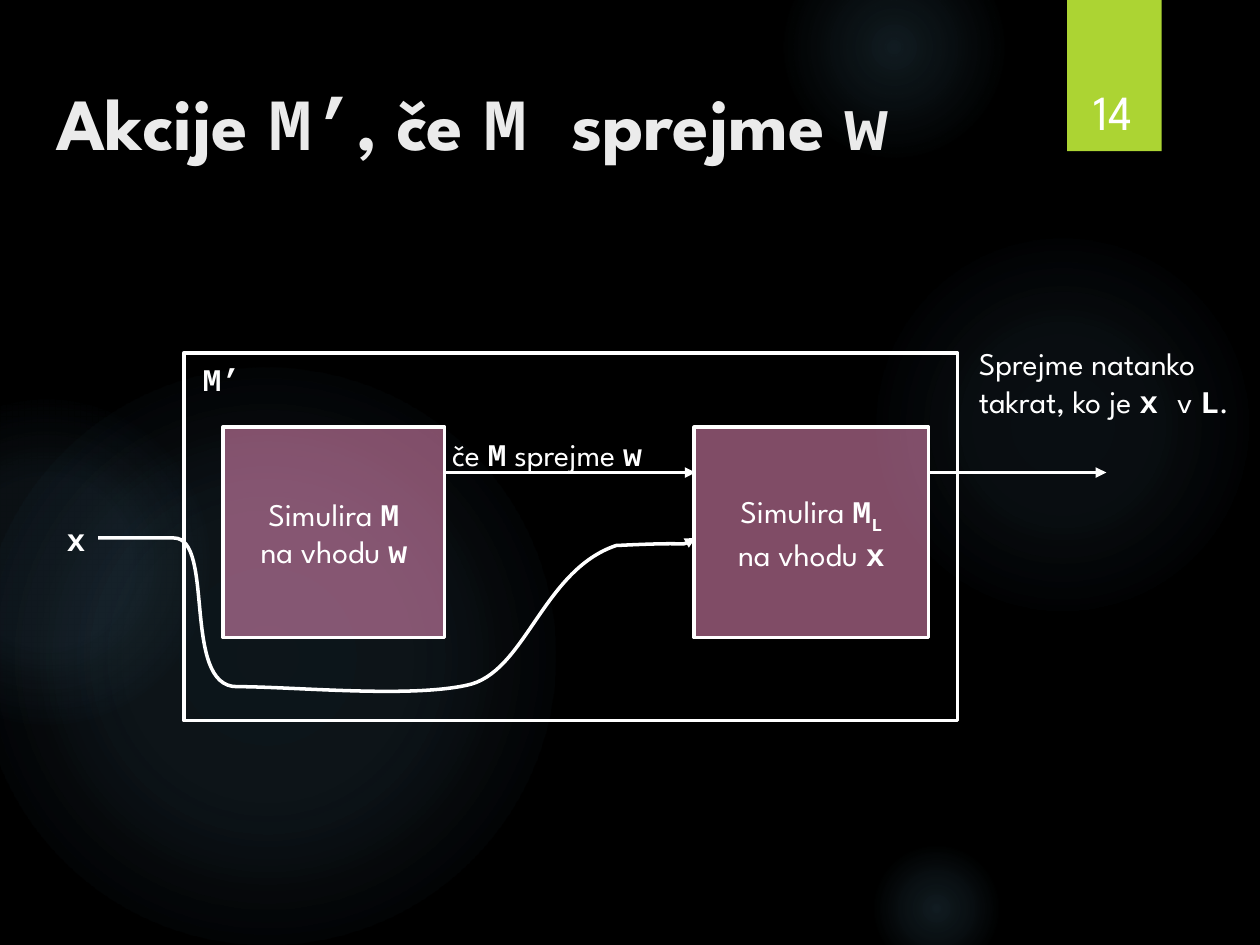
import pptx
import pptx.dml.color
import pptx.enum.shapes
import pptx.enum.text
import pptx.oxml
import pptx.oxml.ns
import pptx.util
from pptx.util import Inches

RGBColor = pptx.dml.color.RGBColor
BLACK = RGBColor(0x00, 0x00, 0x00)
WHITE = RGBColor(0xFF, 0xFF, 0xFF)
TITLE_GRAY = RGBColor(0xEB, 0xEB, 0xEB)
LIME = RGBColor(0xAC, 0xD4, 0x33)
PINK = RGBColor(0xFF, 0x99, 0xCC)
GLOW_BLUE = RGBColor(0x7A, 0xC4, 0xF0)

SHAPES = pptx.enum.shapes.MSO_SHAPE
ANCHOR = pptx.enum.text.MSO_ANCHOR
ALIGN = pptx.enum.text.PP_ALIGN
NAMESPACE = pptx.oxml.ns.nsdecls("a")
qn = pptx.oxml.ns.qn


def write_text(shape, text, size=18, color=WHITE, bold=False, align=ALIGN.LEFT,
               anchor=ANCHOR.TOP, wrap=True):
    """Write lines of text, with `code` in bold monospace and _ before a subscript."""
    frame = shape.text_frame
    frame.word_wrap = wrap
    frame.vertical_anchor = anchor
    for index, line in enumerate(text.split("\n")):
        paragraph = frame.paragraphs[0] if index == 0 else frame.add_paragraph()
        paragraph.alignment = align
        for position, piece in enumerate(line.split("`")):
            is_code = position % 2 == 1
            for level, part in enumerate(piece.split("_")):
                if not part:
                    continue
                run = paragraph.add_run()
                run.text = part
                run.font.name = "Courier New" if is_code else "League Spartan"
                run.font.size = pptx.util.Pt(size)
                run.font.bold = bold or is_code
                run.font.color.rgb = color
                if level:
                    run.font._element.set("baseline", "-25000")


class Diagram:
    def __init__(self, slide, line_color=WHITE, line_width=2):
        self.slide = slide
        self.line_color = line_color
        self.line_width = pptx.util.Pt(line_width)

    def style_line(self, shape, arrow=False):
        shape.line.color.rgb = self.line_color
        shape.line.width = self.line_width
        if arrow:
            shape.line._get_or_add_ln().append(
                pptx.oxml.parse_xml(f'<a:tailEnd {NAMESPACE} type="triangle"/>'))

    def box(self, left, top, width, height, kind=SHAPES.RECTANGLE, fill=None,
            alpha=None, outlined=True):
        shape = self.slide.shapes.add_shape(
            kind, Inches(left), Inches(top), Inches(width), Inches(height))
        shape.shadow.inherit = False
        if fill is None:
            shape.fill.background()
        else:
            shape.fill.solid()
            shape.fill.fore_color.rgb = fill
        if alpha is not None:
            color = shape._element.spPr.find(".//" + qn("a:srgbClr"))
            color.append(pptx.oxml.parse_xml(
                f'<a:alpha {NAMESPACE} val="{alpha * 1000}"/>'))
        if outlined:
            self.style_line(shape)
        else:
            shape.line.fill.background()
        return shape

    def glow(self, left, top, diameter, stops):
        shape = self.box(left, top, diameter, diameter, kind=SHAPES.OVAL, outlined=False)
        stop_xml = "".join(
            f'<a:gs pos="{position * 1000}"><a:srgbClr val="{GLOW_BLUE}">'
            f'<a:alpha val="{alpha * 1000}"/></a:srgbClr></a:gs>'
            for position, alpha in stops)
        gradient = pptx.oxml.parse_xml(
            f'<a:gradFill {NAMESPACE} rotWithShape="1"><a:gsLst>{stop_xml}</a:gsLst>'
            '<a:path path="circle"><a:fillToRect l="50000" t="50000" r="50000" b="50000"/>'
            '</a:path></a:gradFill>')
        properties = shape._element.spPr
        properties.replace(properties.find(qn("a:noFill")), gradient)

    def label(self, left, top, width, height, text, **text_format):
        shape = self.slide.shapes.add_textbox(
            Inches(left), Inches(top), Inches(width), Inches(height))
        write_text(shape, text, **text_format)

    def simulator(self, left, width, text):
        shape = self.box(left, 3.39, width, 1.67, fill=PINK, alpha=50)
        write_text(shape, text, align=ALIGN.CENTER, anchor=ANCHOR.MIDDLE, wrap=False)

    def arrow(self, start, end, y):
        connector = self.slide.shapes.add_connector(
            pptx.enum.shapes.MSO_CONNECTOR.STRAIGHT,
            Inches(start), Inches(y), Inches(end), Inches(y))
        self.style_line(connector, arrow=True)
        connector._element.spPr.append(pptx.oxml.parse_xml(f"<a:effectLst {NAMESPACE}/>"))

    def curved_arrow(self, start, straight_end, curve_points):
        builder = self.slide.shapes.build_freeform(
            Inches(start[0]), Inches(start[1]), scale=1.0)
        points = [straight_end] + curve_points
        builder.add_line_segments([(Inches(x), Inches(y)) for x, y in points], close=False)
        shape = builder.convert_to_shape()
        shape.shadow.inherit = False
        shape.fill.background()
        self.style_line(shape, arrow=True)
        path = shape._element.spPr.find(".//" + qn("a:path"))
        segments = path.findall(qn("a:lnTo"))[1:]
        for first in range(0, len(segments), 3):
            curve = pptx.oxml.parse_xml(f"<a:cubicBezTo {NAMESPACE}/>")
            path.append(curve)
            for segment in segments[first:first + 3]:
                curve.append(segment[0])
                path.remove(segment)


def main():
    presentation = pptx.Presentation()
    presentation.slide_width = Inches(10)
    presentation.slide_height = Inches(7.5)
    slide = presentation.slides.add_slide(presentation.slide_layouts[6])
    slide.background.fill.solid()
    slide.background.fill.fore_color.rgb = BLACK
    diagram = Diagram(slide)

    for left, top, diameter, stops in [
        (6.89, 1.83, 3.08, [(0, 7), (36, 6), (69, 0)]),
        (6.22, -0.5, 1.75, [(0, 14), (36, 7), (73, 0)]),
        (6.89, 6.67, 1.08, [(0, 14), (36, 7), (66, 0)]),
        (-0.17, 2.92, 4.58, [(0, 11), (36, 10), (75, 0)]),
        (-0.92, 3.17, 2.58, [(0, 8), (36, 8), (72, 0)]),
    ]:
        diagram.glow(left, top, diameter, stops)

    diagram.box(8.47, 0, 0.75, 1.2, fill=LIME, outlined=False)
    diagram.label(0.35, 0.56, 7.72, 1.53, "Akcije `M’`, če `M `sprejme `w`",
                  size=42, color=TITLE_GRAY, bold=True)
    diagram.label(8.49, 0.32, 0.69, 0.84, "14", size=28,
                  align=ALIGN.CENTER, anchor=ANCHOR.BOTTOM)

    diagram.simulator(1.77, 1.76, "Simulira `M`\nna vhodu `w`")
    diagram.box(1.46, 2.8, 6.14, 2.92)
    diagram.label(0.43, 4.08, 0.35, 0.4, "`x`", wrap=False)
    diagram.simulator(5.51, 1.86, "Simulira `M_L`\nna vhodu `x`")
    diagram.label(3.49, 3.4, 2.03, 0.4, "če `M` sprejme `w`")
    diagram.arrow(3.53, 5.52, 3.75)
    diagram.label(7.67, 2.68, 2.22, 1.01, "Sprejme natanko takrat, ko je `x `v `L`.")
    diagram.arrow(7.36, 8.78, 3.75)
    diagram.curved_arrow((0.78, 4.27), (1.38, 4.27), [
        (1.71, 4.27), (1.44, 5.45), (1.88, 5.45),
        (2.33, 5.45), (3.23, 5.54), (3.7, 5.44),
        (4.17, 5.35), (4.3, 4.53), (4.89, 4.33),
        (5.49, 4.3), (5.39, 4.35), (5.52, 4.27),
    ])
    diagram.label(1.51, 2.81, 0.51, 0.4, "`M’`")

    presentation.save("out.pptx")


if __name__ == "__main__":
    main()
